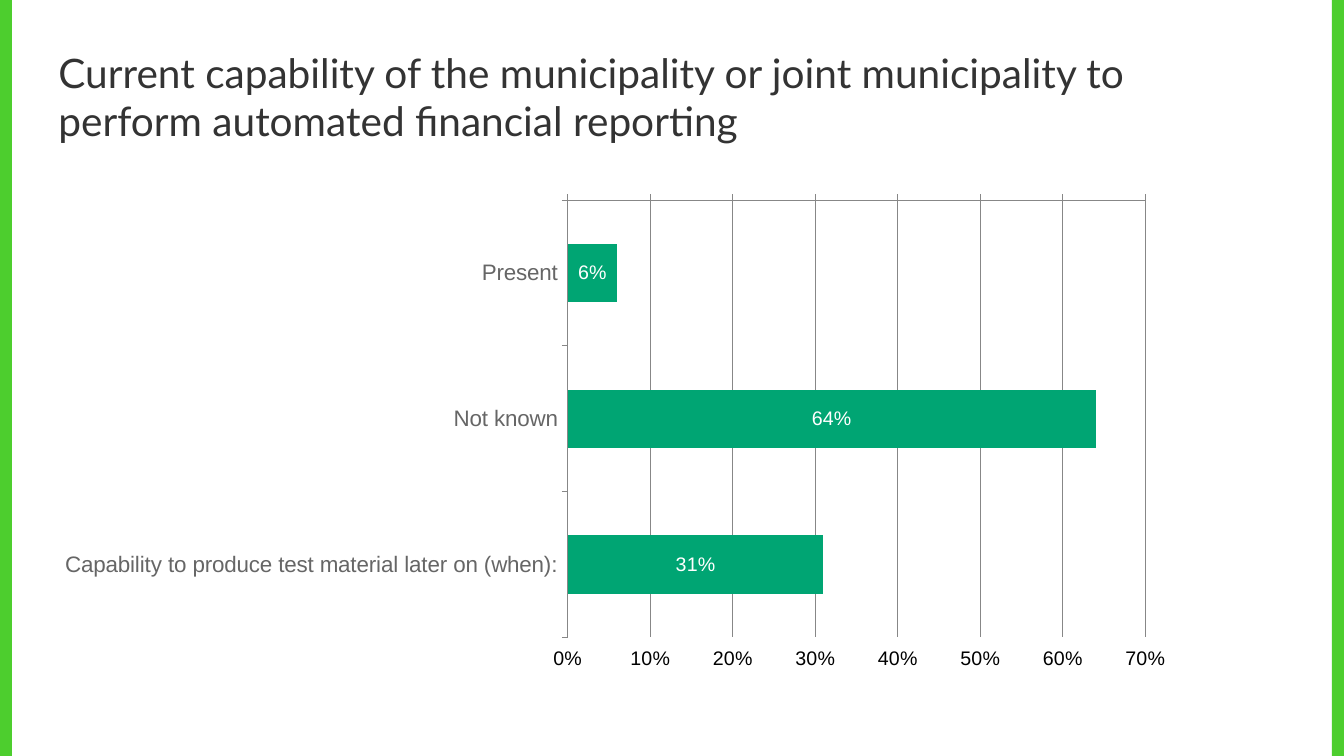
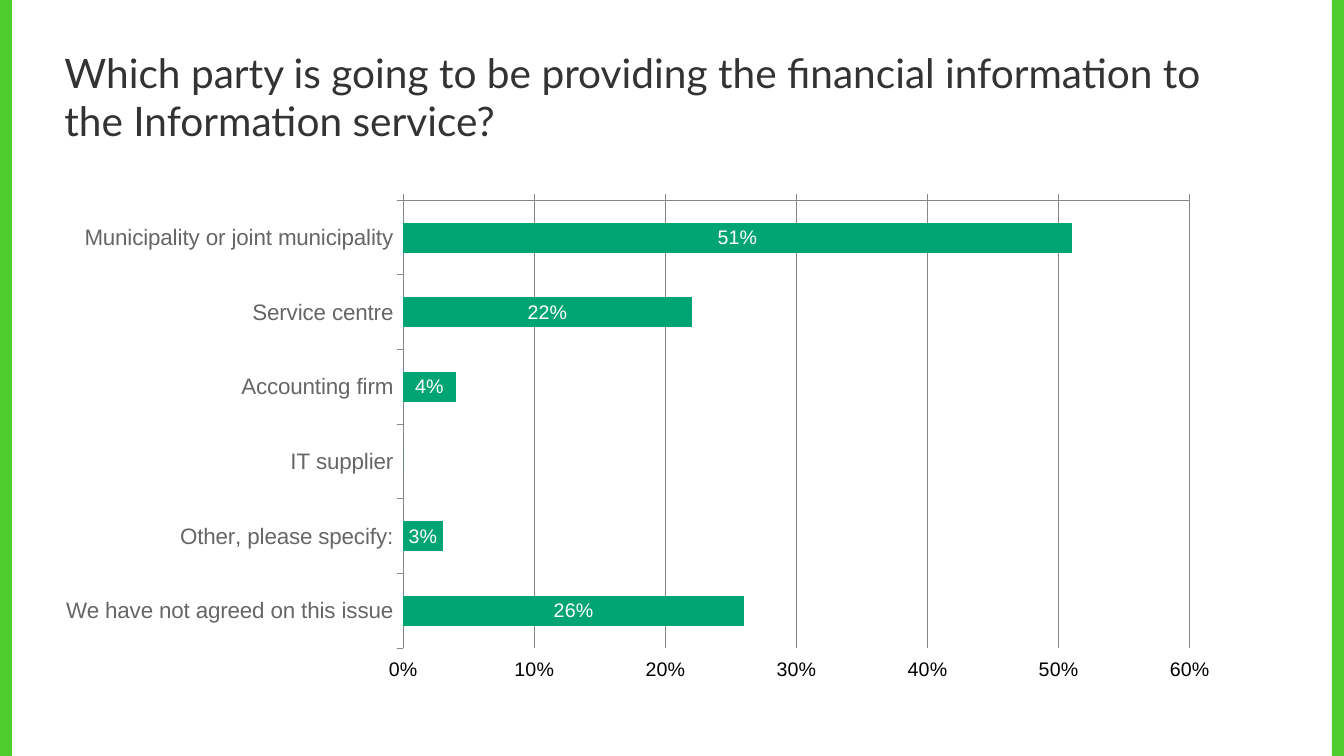
from pptx import Presentation, util as u
from pptx.chart.data import CategoryChartData
from pptx.dml.color import RGBColor
from pptx.enum import chart as ch, shapes, text

COLORS = {"band": "4DCE2E", "title": "333333", "label": "666666", "axis": "000000",
          "grid": "878787", "bar": "00A573", "value": "FFFFFF"}
WIDTH, HEIGHT, BAND = 960, 540, 8.6


def rgb(name):
    return RGBColor.from_string(COLORS[name])


class Deck:
    def __init__(self):
        self.prs = Presentation()
        self.prs.slide_width, self.prs.slide_height = u.Pt(WIDTH), u.Pt(HEIGHT)
        self.s = None

    def font(self, font, name, size, color):
        font.name, font.size, font.bold = name, u.Pt(size), False
        font.color.rgb = rgb(color)

    def slide(self):
        self.s = self.prs.slides.add_slide(self.prs.slide_layouts[6])
        for x in (0, WIDTH - BAND):
            self.band(x)

    def band(self, x):
        sp = self.s.shapes.add_shape(shapes.MSO_SHAPE.RECTANGLE,
                                     u.Pt(x), 0, u.Pt(BAND), u.Pt(HEIGHT))
        sp.shadow.inherit = False
        sp.fill.solid()
        sp.fill.fore_color.rgb = rgb("band")
        sp.line.fill.background()

    def title(self, x, width, words):
        sp = self.s.shapes.add_textbox(u.Pt(x), u.Pt(30.3), u.Pt(width), u.Pt(77))
        tf = sp.text_frame
        tf.word_wrap = True
        tf.vertical_anchor = text.MSO_ANCHOR.MIDDLE
        p = tf.paragraphs[0]
        p.text = words
        self.font(p.font, "Lato", 29, "title")

    def bars(self, width, height, top_value, values):
        data = CategoryChartData(number_format="0%")
        data.categories = list(values)
        data.add_series("Series 1", list(values.values()))
        chart = self.s.shapes.add_chart(ch.XL_CHART_TYPE.BAR_CLUSTERED, u.Pt(30.2), u.Pt(136),
                                        u.Pt(width), u.Pt(height), data).chart
        chart.has_legend = chart.has_title = False
        self.font(chart.font, "Arial", 14, "axis")
        self.axes(chart, top_value)
        plot = chart.plots[0]
        plot.gap_width, plot.vary_by_categories = 150, False
        fill = plot.series[0].format.fill
        fill.solid()
        fill.fore_color.rgb = rgb("bar")
        plot.has_data_labels = True
        labels = plot.data_labels
        labels.show_value = True
        labels.number_format, labels.number_format_is_linked = "0%;;", False
        labels.position = ch.XL_LABEL_POSITION.CENTER
        self.font(labels.font, "Arial", 14, "value")

    def axes(self, chart, top_value):
        cat, val = chart.category_axis, chart.value_axis
        cat.reverse_order = True
        cat.tick_label_position = ch.XL_TICK_LABEL_POSITION.LOW
        self.font(cat.tick_labels.font, "Arial", 16, "label")
        val.minimum_scale, val.maximum_scale, val.major_unit = 0, top_value, 0.1
        val.has_major_gridlines = True
        val.tick_label_position = ch.XL_TICK_LABEL_POSITION.HIGH
        val.tick_labels.number_format = "0%"
        val.tick_labels.number_format_is_linked = False
        for axis in (cat, val):
            axis.major_tick_mark = ch.XL_TICK_MARK.OUTSIDE
            axis.minor_tick_mark = ch.XL_TICK_MARK.NONE
        for part in (cat, val, val.major_gridlines):
            part.format.line.color.rgb = rgb("grid")
            part.format.line.width = u.Pt(0.75)


def main():
    deck = Deck()

    deck.slide()
    deck.title(34.6, 813.6, "Current capability of the municipality or joint municipality "
                            "to perform automated financial reporting")
    deck.bars(818.6, 349.2, 0.7, {
        "Present": 0.06,
        "Not known": 0.64,
        "Capability to produce test material later on (when):": 0.31,
    })

    deck.slide()
    deck.title(38.9, 851, "Which party is going to be providing the financial information "
                          "to the Information service?")
    deck.bars(851, 357.1, 0.6, {
        "Municipality or joint municipality": 0.51,
        "Service centre": 0.22,
        "Accounting firm": 0.04,
        "IT supplier": 0,
        "Other, please specify:": 0.03,
        "We have not agreed on this issue": 0.26,
    })

    deck.prs.save("out.pptx")


if __name__ == "__main__":
    main()
